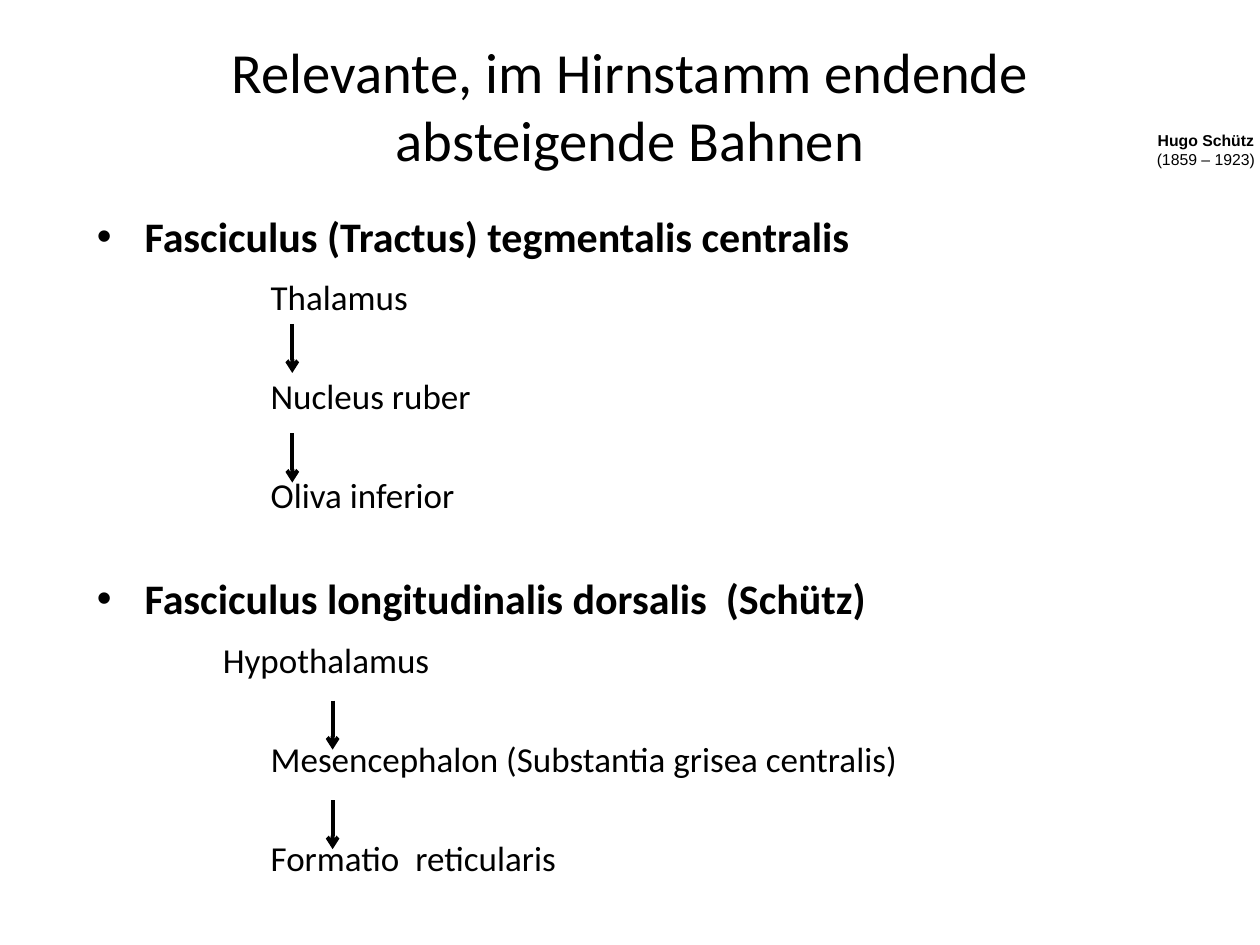
from lxml.etree import SubElement
from pptx import Presentation
from pptx.dml.color import RGBColor
from pptx.enum.shapes import MSO_CONNECTOR
from pptx.enum.text import MSO_ANCHOR, PP_ALIGN
from pptx.oxml.ns import qn
from pptx.util import Inches, Pt

BLACK = RGBColor(0, 0, 0)
WHITE = RGBColor(255, 255, 255)

HEADING_INDENT = 0.38
STEP_INDENT = 1.38
HEADING_FORMAT = {"size": Pt(24), "bold": True}
STEP_FORMAT = {"size": Pt(20), "bold": False}
FIRST_STEP_GAP = 8.6
WIDE_GAP = 32.6  # one empty line plus the normal gap

# heading, gap above it, steps as (text, indent)
TRACTS = [
    ("Fasciculus (Tractus) tegmentalis centralis", 4.8,
     [("Thalamus", STEP_INDENT),
      ("Nucleus ruber", STEP_INDENT),
      ("Oliva inferior", STEP_INDENT)]),
    ("Fasciculus longitudinalis dorsalis  (Schütz)", WIDE_GAP,
     [("Hypothalamus", 1),
      ("Mesencephalon (Substantia grisea centralis)", STEP_INDENT),
      ("Formatio  reticularis", STEP_INDENT)]),
]
ARROW_LENGTH = 0.39
ARROW_STARTS = [(2.32, 2.57), (2.32, 3.44), (2.64, 5.56), (2.64, 6.35)]


def add_text_frame(slide, box, anchor=MSO_ANCHOR.TOP):
    text_frame = slide.shapes.add_textbox(*map(Inches, box)).text_frame
    text_frame.word_wrap = True
    text_frame.vertical_anchor = anchor
    return text_frame


def add_paragraph(text_frame, text, font_format, paragraph_format):
    """Fill the first paragraph if it is still empty, else append one."""
    paragraph = text_frame.paragraphs[0]
    if paragraph.runs:
        paragraph = text_frame.add_paragraph()
    for name, value in paragraph_format.items():
        setattr(paragraph, name, value)
    run = paragraph.add_run()
    run.text = text
    for name, value in {"name": "Calibri", **font_format}.items():
        setattr(run.font, name, value)
    run.font.color.rgb = BLACK
    return paragraph


def set_indent(paragraph, left, bullet=False):
    properties = paragraph._p.get_or_add_pPr()
    properties.set("marL", str(Inches(left)))
    properties.set("indent", str(-Inches(left) if bullet else 0))
    if bullet:
        SubElement(properties, qn("a:buFont"), typeface="Arial")
        SubElement(properties, qn("a:buChar"), char="•")
    else:
        SubElement(properties, qn("a:buNone"))


def add_title(slide, box):
    text_frame = add_text_frame(slide, box, MSO_ANCHOR.MIDDLE)
    add_paragraph(text_frame, "Relevante, im Hirnstamm endende absteigende Bahnen",
                  {"size": Pt(32.4)}, {"alignment": PP_ALIGN.CENTER})


def add_tracts(slide, box):
    text_frame = add_text_frame(slide, box)
    for heading, heading_gap, steps in TRACTS:
        paragraph = add_paragraph(text_frame, heading, HEADING_FORMAT,
                                  {"space_before": Pt(heading_gap)})
        set_indent(paragraph, HEADING_INDENT, bullet=True)
        for index, (step, indent) in enumerate(steps):
            gap = WIDE_GAP if index else FIRST_STEP_GAP
            paragraph = add_paragraph(text_frame, step, STEP_FORMAT,
                                      {"space_before": Pt(gap)})
            set_indent(paragraph, indent)


def add_down_arrow(slide, left, top):
    arrow = slide.shapes.add_connector(
        MSO_CONNECTOR.STRAIGHT, Inches(left), Inches(top),
        Inches(left), Inches(top + ARROW_LENGTH))
    arrow.line.color.rgb = BLACK
    arrow.line.width = Pt(2.25)
    SubElement(arrow.line._get_or_add_ln(), qn("a:tailEnd"), type="arrow")
    SubElement(arrow._element.spPr, qn("a:effectLst"))


def add_person_caption(slide, box):
    text_frame = add_text_frame(slide, box)
    for text, bold in (("Hugo Schütz", True), ("(1859 – 1923)", False)):
        add_paragraph(text_frame, text,
                      {"name": "Arial", "size": Pt(9), "bold": bold},
                      {"alignment": PP_ALIGN.CENTER})


def main():
    presentation = Presentation()
    presentation.slide_width = Inches(10)
    presentation.slide_height = Inches(7.5)
    slide = presentation.slides.add_slide(presentation.slide_layouts[6])
    slide.background.fill.solid()
    slide.background.fill.fore_color.rgb = WHITE

    add_title(slide, (0.75, 0.21, 8.5, 1.25))
    add_tracts(slide, (0.67, 1.62, 8.9, 5.88))
    for left, top in ARROW_STARTS:
        add_down_arrow(slide, left, top)
    add_person_caption(slide, (9.02, 0.99, 1.1, 0.4))
    presentation.save("out.pptx")


if __name__ == "__main__":
    main()
